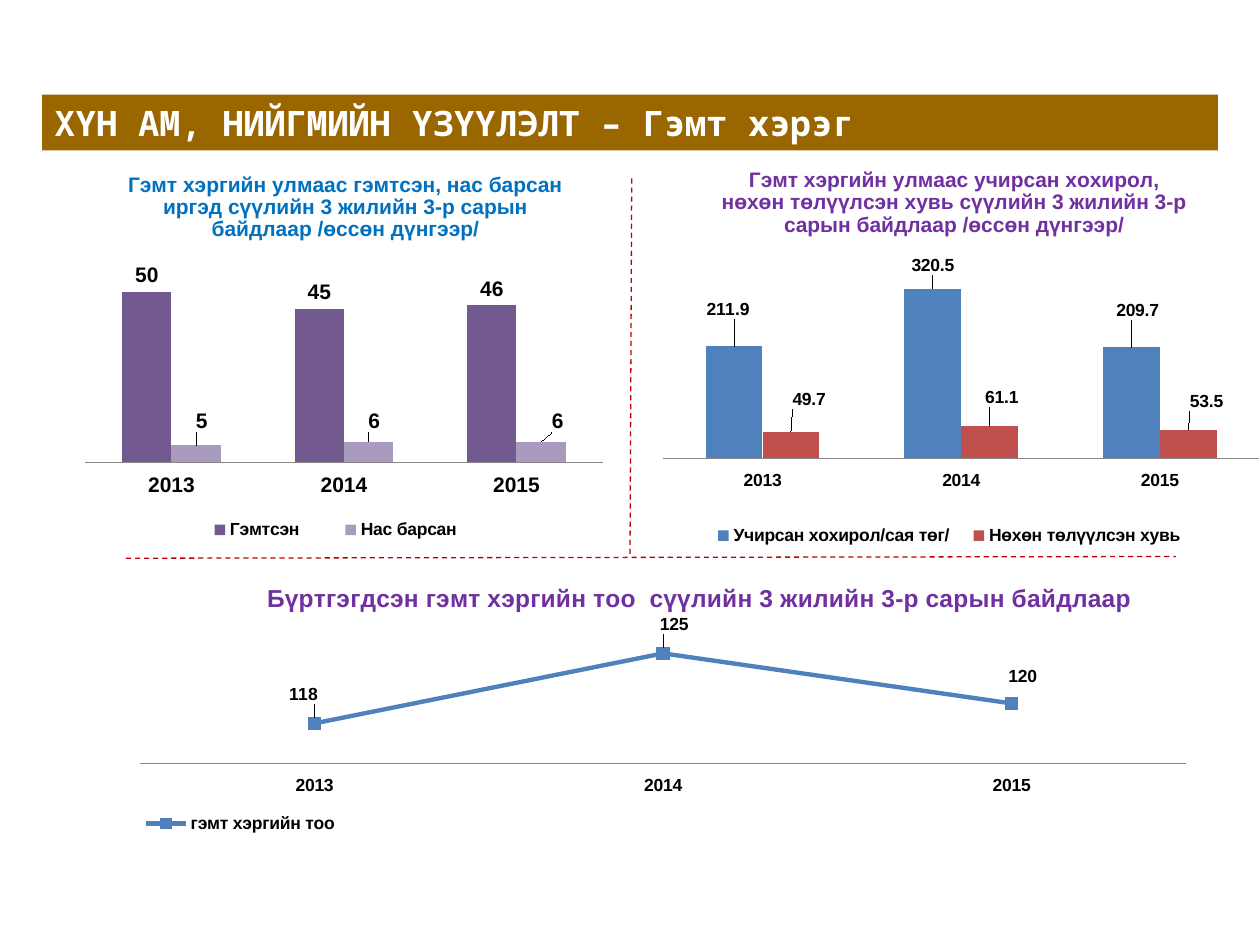
from lxml import etree
from pptx import Presentation
from pptx.chart.data import CategoryChartData
from pptx.dml.color import RGBColor
from pptx.enum.chart import (XL_CHART_TYPE, XL_LABEL_POSITION, XL_LEGEND_POSITION,
                             XL_MARKER_STYLE, XL_TICK_LABEL_POSITION, XL_TICK_MARK)
from pptx.enum.dml import MSO_LINE
from pptx.enum.shapes import MSO_CONNECTOR, MSO_SHAPE
from pptx.enum.text import MSO_ANCHOR, PP_ALIGN
from pptx.oxml.ns import qn
from pptx.util import Pt

BARS = XL_CHART_TYPE.COLUMN_CLUSTERED
LINE = XL_CHART_TYPE.LINE_MARKERS
OUT_END = XL_LABEL_POSITION.OUTSIDE_END
ABOVE = XL_LABEL_POSITION.ABOVE
TOP = XL_LEGEND_POSITION.TOP
SQUARE = XL_MARKER_STYLE.SQUARE
LOW = XL_TICK_LABEL_POSITION.LOW
NO_TICK = XL_TICK_MARK.NONE
DASH = MSO_LINE.DASH
STRAIGHT = MSO_CONNECTOR.STRAIGHT
RECT = MSO_SHAPE.RECTANGLE
MIDDLE = MSO_ANCHOR.MIDDLE
JUSTIFY = PP_ALIGN.JUSTIFY

YEARS = ["2013", "2014", "2015"]
BLUE, RED, VIOLET = "4F81BD", "C0504D", "7030A0"


def color(code):
    return RGBColor.from_string(code)


def place(node, index, inner=False, edge=True, **spots):
    for old in node.findall(qn("c:layout")):
        node.remove(old)
    layout = etree.Element(qn("c:layout"))
    manual = etree.SubElement(layout, qn("c:manualLayout"))
    if inner:
        etree.SubElement(manual, qn("c:layoutTarget")).set("val", "inner")
    if edge:
        for mode in ("xMode", "yMode"):
            etree.SubElement(manual, qn("c:" + mode)).set("val", "edge")
    for key, value in spots.items():
        etree.SubElement(manual, qn("c:" + key)).set("val", str(value))
    node.insert(index, layout)


class Deck:
    face = "Arial"
    mono = "Noto Sans Mono"
    ink = "000000"
    rule = "C00000"

    def __init__(self, slide):
        self.slide = slide

    def style(self, font, size, code=None, face=None):
        font.name = face or self.face
        font.size = Pt(size)
        font.bold = True
        font.color.rgb = color(code or self.ink)

    def banner(self, box, text, fill):
        shape = self.slide.shapes.add_shape(RECT, *map(Pt, box))
        shape.shadow.inherit = False
        shape.fill.solid()
        shape.fill.fore_color.rgb = color(fill)
        shape.line.fill.background()
        frame = shape.text_frame
        frame.word_wrap = True
        frame.vertical_anchor = MIDDLE
        para = frame.paragraphs[0]
        para.text = text
        para.alignment = JUSTIFY
        self.style(para.font, 20, "FFFFFF", self.mono)

    def divide(self, *ends):
        line = self.slide.shapes.add_connector(STRAIGHT, *map(Pt, ends))
        line.line.color.rgb = color(self.rule)
        line.line.width = Pt(0.75)
        line.line.dash_style = DASH
        etree.SubElement(line._element.spPr, qn("a:effectLst"))

    def chart(self, kind, box, title, head, span, plot, legend, rows, size=10):
        data = CategoryChartData()
        data.categories = YEARS
        for name, values, *_ in rows:
            data.add_series(name, values)
        chart = self.slide.shapes.add_chart(kind, *map(Pt, box), data).chart
        self.style(chart.font, size)
        self.title(chart, title, *head)
        self.axes(chart, span, size)
        place(chart._chartSpace.chart.plotArea, 0, inner=True,
              **dict(zip("xywh", plot)))
        self.legend(chart, legend)
        group = chart.plots[0]
        group.vary_by_categories = False
        if kind == BARS:
            group.gap_width = 150
        for series, (_, _, code, shifts) in zip(group.series, rows):
            self.paint(series, kind, code)
            self.labels(series, ABOVE if kind == LINE else OUT_END, shifts, size)

    def title(self, chart, text, size, code, x, y):
        chart.has_title = True
        para = chart.chart_title.text_frame.paragraphs[0]
        para.text = text
        self.style(para.font, size, code)
        place(chart.chart_title._element, 1, x=x, y=y)

    def axes(self, chart, span, size):
        value, years = chart.value_axis, chart.category_axis
        value.minimum_scale, value.maximum_scale = span
        value.has_major_gridlines = False
        value.visible = False
        years.major_tick_mark = years.minor_tick_mark = NO_TICK
        years.tick_label_position = LOW
        years.format.line.color.rgb = color("868686")
        self.style(years.tick_labels.font, size)

    def legend(self, chart, spots):
        chart.has_legend = True
        chart.legend.position = TOP
        chart.legend.include_in_layout = False
        self.style(chart.legend.font, 10)
        place(chart.legend._element, 1, **dict(zip("xywh", spots)))

    def paint(self, series, kind, code):
        fills = [series.format.fill]
        if kind == LINE:
            series.smooth = False
            series.format.line.color.rgb = color(code)
            series.format.line.width = Pt(2.5)
            series.marker.style = SQUARE
            series.marker.size = 7
            series.marker.format.line.color.rgb = color(code)
            fills = [series.marker.format.fill]
        for fill in fills:
            fill.solid()
            fill.fore_color.rgb = color(code)

    def labels(self, series, spot, shifts, size):
        for index, (x, y) in enumerate(shifts):
            label = series.points[index].data_label
            self.style(label.font, size)
            label.position = spot
            node = series._element.find(qn("c:dLbls")).findall(qn("c:dLbl"))[index]
            place(node, 1, edge=False, x=x, y=y)


def main():
    show = Presentation()
    show.slide_width, show.slide_height = Pt(720), Pt(540)
    deck = Deck(show.slides.add_slide(show.slide_layouts[6]))
    deck.divide(72, 319, 672, 318)
    deck.divide(361, 102, 360, 318)
    deck.banner((24, 54, 672, 32), "ХҮН АМ, НИЙГМИЙН ҮЗҮҮЛЭЛТ – Гэмт хэрэг", "996600")
    deck.chart(
        BARS, (36, 84, 318, 234),
        "Гэмт хэргийн улмаас гэмтсэн, нас барсан иргэд сүүлийн 3 жилийн "
        "3-р сарын байдлаар /өссөн дүнгээр/",
        (12, "0070C0", 0.11, 0.05), (0, 60),
        (0.04, 0.27, 0.93, 0.5), (0.2, 0.9, 0.58, 0.07),
        [("Гэмтсэн", (50, 45, 46), "725990", [(0, 0)] * 3),
         ("Нас барсан", (5, 6, 6), "A99BBD",
          [(0.01, -0.02), (0.01, -0.01), (0.03, -0.01)])],
        size=12)
    deck.chart(
        LINE, (42, 324, 636, 156),
        "Бүртгэгдсэн гэмт хэргийн тоо  сүүлийн 3 жилийн 3-р сарын байдлаар",
        (14, VIOLET, 0.17, 0.04), (114, 126),
        (0.06, 0.28, 0.94, 0.44), (0.05, 0.89, 0.2, 0.1),
        [("гэмт хэргийн тоо", (118, 125, 120), BLUE,
          [(-0.01, -0.03), (0.01, -0.03), (0.01, -0.02)])])
    deck.chart(
        BARS, (372, 78, 348, 252),
        "Гэмт хэргийн улмаас учирсан хохирол, нөхөн төлүүлсэн хувь сүүлийн "
        "3 жилийн 3-р сарын байдлаар /өссөн дүнгээр/",
        (12, VIOLET, 0.11, 0.06), (0, 350),
        (0.02, 0.31, 0.98, 0.42), (0.08, 0.87, 0.82, 0.07),
        [("Учирсан хохирол/сая төг/", (211.9, 320.5, 209.7), BLUE,
          [(-0.01, -0.05), (0, -0.02), (0.01, -0.05)]),
         ("Нөхөн төлүүлсэн хувь", (49.7, 61.1, 53.5), RED,
          [(0.03, -0.04), (0.02, -0.03), (0.03, -0.03)])])
    show.save("out.pptx")


if __name__ == "__main__":
    main()
